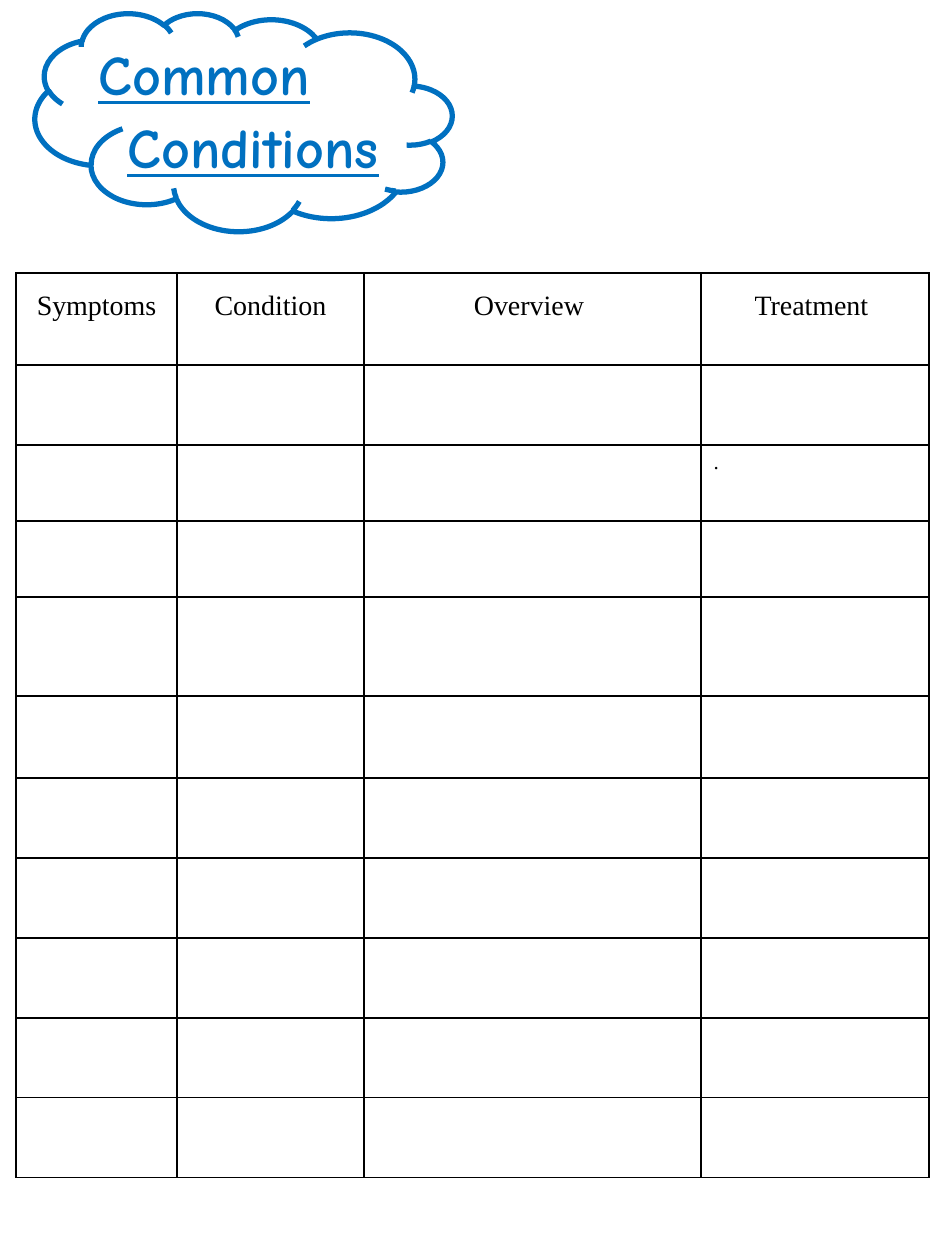
import lxml.etree
import pptx
import pptx.dml.color
import pptx.enum.shapes
import pptx.enum.text
import pptx.oxml.ns
import pptx.util

SCALE = pptx.util.Inches(1) / 126
BLACK, WHITE, BLUE = "000000", "FFFFFF", "0070C0"
HEADINGS = ["Symptoms", "Condition", "Overview ", "Treatment "]
COLUMN_WIDTHS = [161, 187, 337, 228]
ROW_HEIGHTS = [92, 80, 76, 76, 99, 82] + [80] * 5


def px(length):
    return pptx.util.Emu(round(length * SCALE))


def color(value):
    return pptx.dml.color.RGBColor.from_string(value)


class Page:
    title_font = "Comic Neue"
    table_font = "Times New Roman"

    def __init__(self, deck):
        self.slide = deck.slides.add_slide(deck.slide_layouts[6])
        self.shapes = self.slide.shapes

    def label(self, frame, text, font, size, ink):
        para = frame.paragraphs[0]
        para.text = text
        para.font.name = font
        para.font.size = pptx.util.Pt(size)
        para.font.color.rgb = color(ink)
        return para

    def cloud(self, left, top, width, height):
        shape = self.shapes.add_shape(
            pptx.enum.shapes.MSO_SHAPE.CLOUD, px(left), px(top), px(width), px(height))
        shape.shadow.inherit = False
        shape.fill.solid()
        shape.fill.fore_color.rgb = color(WHITE)
        shape.line.color.rgb = color(BLUE)
        shape.line.width = pptx.util.Pt(3)
        shape.element.spPr.get_or_add_xfrm().set("flipH", "1")

    def title(self, left, top, width, height, text, wrap):
        box = self.shapes.add_textbox(px(left), px(top), px(width), px(height))
        box.text_frame.word_wrap = wrap
        para = self.label(box.text_frame, text, self.title_font, 32, BLUE)
        para.font.bold = True
        para.font.underline = True

    def border(self, cell):
        properties = cell._tc.get_or_add_tcPr()
        for side in ("lnL", "lnR", "lnT", "lnB"):
            line = lxml.etree.SubElement(
                properties, pptx.oxml.ns.qn(f"a:{side}"), w=str(pptx.util.Pt(1)))
            fill = lxml.etree.SubElement(line, pptx.oxml.ns.qn("a:solidFill"))
            lxml.etree.SubElement(fill, pptx.oxml.ns.qn("a:srgbClr"), val=BLACK)

    def table(self, left, top, widths, heights):
        frame = self.shapes.add_table(
            len(heights), len(widths), px(left), px(top), px(sum(widths)), px(sum(heights)))
        table = frame.table
        table.first_row = False
        table.horz_banding = False
        for column, width in zip(table.columns, widths):
            column.width = px(width)
        for row, height in zip(table.rows, heights):
            row.height = px(height)
        for cell in table.iter_cells():
            self.border(cell)
            cell.fill.background()
        return table

    def heading(self, cell, text):
        cell.margin_top = px(18)
        para = self.label(cell.text_frame, text, self.table_font, 16, BLACK)
        para.alignment = pptx.enum.text.PP_ALIGN.CENTER

    def entry(self, cell, text):
        self.label(cell.text_frame, text, self.table_font, 12, BLACK)


def main():
    deck = pptx.Presentation()
    deck.slide_width, deck.slide_height = px(945), px(1260)
    page = Page(deck)
    page.cloud(35, 13, 417, 218)
    page.title(86, 33, 334, 79, "Common", True)
    page.title(115, 106, 296, 79, "Conditions", False)
    conditions = page.table(16, 273, COLUMN_WIDTHS, ROW_HEIGHTS)
    for index, text in enumerate(HEADINGS):
        page.heading(conditions.cell(0, index), text)
    page.entry(conditions.cell(2, 3), ".")
    deck.save("out.pptx")


if __name__ == "__main__":
    main()
